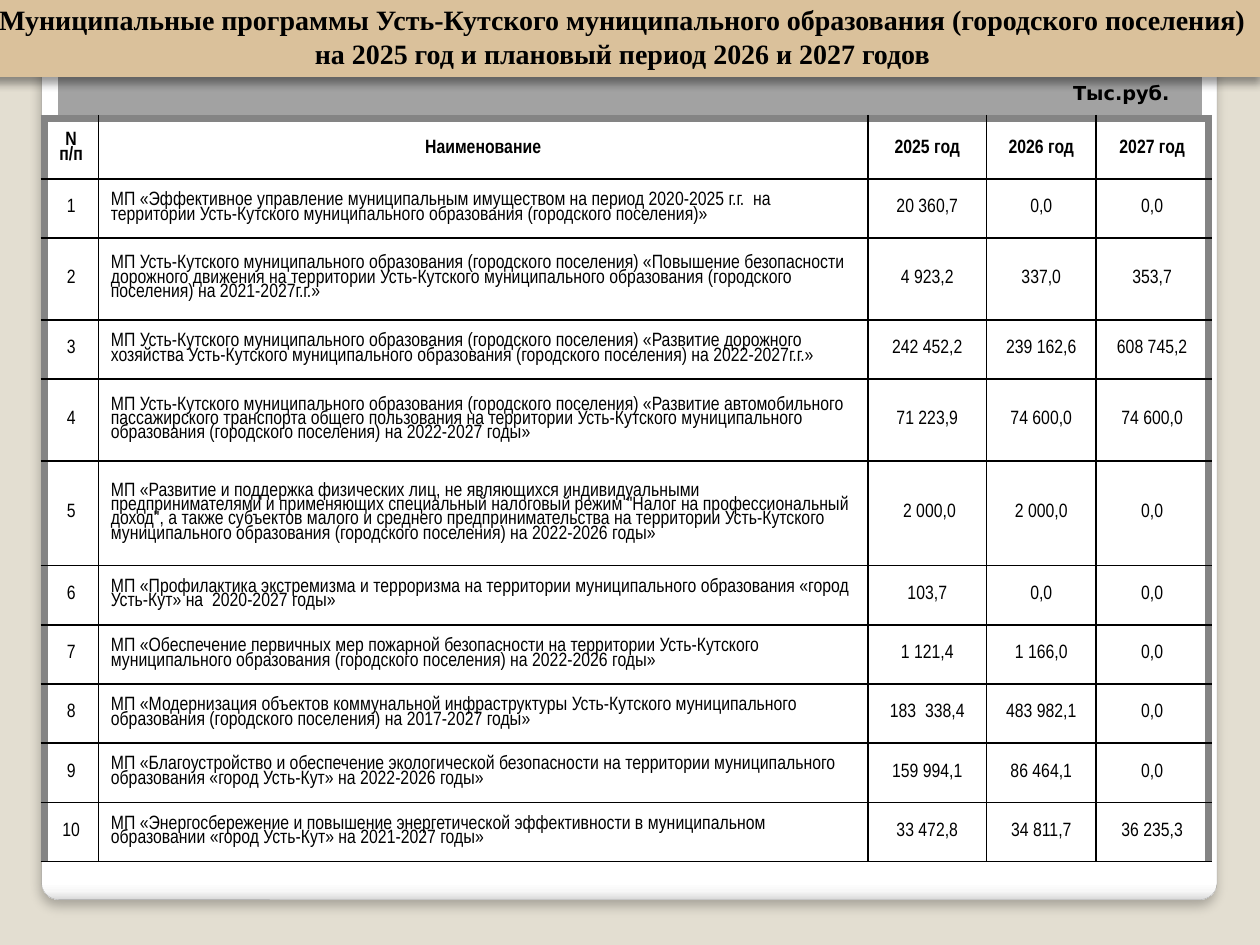
"""Build a slide with a table of municipal programmes and their yearly budgets."""
from lxml import etree
from pptx import Presentation, util as u
from pptx.dml.color import RGBColor
from pptx.enum import shapes, text
from pptx.oxml import ns

TITLE = ("Муниципальные программы Усть-Кутского муниципального образования (городского поселения) "
         "на 2025 год и плановый период 2026 и 2027 годов")
UNIT = "Тыс.руб."
HEADER = ("N п/п", "Наименование", "2025 год", "2026 год", "2027 год")
PROGRAMMES = [
    ("МП «Эффективное управление муниципальным имуществом на период 2020-2025 г.г.  на территории "
     "Усть-Кутского муниципального образования (городского поселения)»", "20 360,7", "0,0", "0,0"),
    ("МП Усть-Кутского муниципального образования (городского поселения) «Повышение безопасности "
     "дорожного движения на территории Усть-Кутского муниципального образования (городского "
     "поселения) на 2021-2027г.г.»", "4 923,2", "337,0", "353,7"),
    ("МП Усть-Кутского муниципального образования (городского поселения) «Развитие дорожного "
     "хозяйства Усть-Кутского муниципального образования (городского поселения) на 2022-2027г.г.»",
     "242 452,2", "239 162,6", "608 745,2"),
    ("МП Усть-Кутского муниципального образования (городского поселения) «Развитие автомобильного "
     "пассажирского транспорта общего пользования на территории Усть-Кутского муниципального "
     "образования (городского поселения) на 2022-2027 годы»", "71 223,9", "74 600,0", "74 600,0"),
    ("МП «Развитие и поддержка физических лиц, не являющихся индивидуальными предпринимателями и "
     "применяющих специальный налоговый режим \"Налог на профессиональный доход\", а также субъектов "
     "малого и среднего предпринимательства на территории Усть-Кутского муниципального образования "
     "(городского поселения) на 2022-2026 годы»", " 2 000,0", "2 000,0", "0,0"),
    ("МП «Профилактика экстремизма и терроризма на территории муниципального образования "
     "«город Усть-Кут» на  2020-2027 годы»", "103,7", "0,0", "0,0"),
    ("МП «Обеспечение первичных мер пожарной безопасности на территории Усть-Кутского муниципального "
     "образования (городского поселения) на 2022-2026 годы»", "1 121,4", "1 166,0", "0,0"),
    ("МП «Модернизация объектов коммунальной инфраструктуры Усть-Кутского муниципального "
     "образования (городского поселения) на 2017-2027 годы»", "183  338,4", "483 982,1", "0,0"),
    ("МП «Благоустройство и обеспечение экологической безопасности на территории муниципального "
     "образования «город Усть-Кут» на 2022-2026 годы»", "159 994,1", "86 464,1", "0,0"),
    ("МП «Энергосбережение и повышение энергетической эффективности в муниципальном образовании "
     "«город Усть-Кут» на 2021-2027 годы»", "33 472,8", "34 811,7", "36 235,3"),
]
COLUMN_WIDTHS = (0.43, 6.11, 0.94, 0.87, 0.89)
HEADER_HEIGHT, ROW_HEIGHT = 0.48, 0.47
TALL_ROWS = {2: 0.65, 4: 0.65, 5: 0.83}

BLACK = RGBColor(0x00, 0x00, 0x00)
WHITE = RGBColor(0xFF, 0xFF, 0xFF)
BEIGE = RGBColor(0xE3, 0xDE, 0xD1)
TAN = RGBColor(0xDA, 0xC1, 0x9B)
LIGHT = RGBColor(0xF7, 0xF7, 0xF7)
PALE = RGBColor(0xE1, 0xE1, 0xE1)
SILVER = RGBColor(0xDA, 0xDA, 0xDA)
GREY = RGBColor(0xA2, 0xA2, 0xA2)
EDGE = RGBColor(0xA4, 0xA4, 0xA4)
FRAME = RGBColor(0x84, 0x84, 0x84)

DOWNWARD = '<a:lin ang="5400000" scaled="0"/>'
RADIAL = '<a:path path="circle"><a:fillToRect l="50000" t="175000" r="50000" b="-75000"/></a:path>'


def element(tag, attributes, inner):
    return etree.fromstring(f'<a:{tag} {ns.nsdecls("a")} {attributes}>{inner}</a:{tag}>')


def add_box(page, kind, place, shadow=None):
    box = page.shapes.add_shape(kind, *map(u.Inches, place))
    box.line.fill.background()
    box.shadow.inherit = False
    if shadow:
        alpha, blur, distance = shadow
        box.element.spPr.find(ns.qn("a:effectLst")).append(element(
            "outerShdw", f'blurRad="{u.Pt(blur)}" dist="{u.Pt(distance)}" dir="5400000" rotWithShape="0"',
            f'<a:srgbClr val="{BLACK}"><a:alpha val="{alpha * 1000}"/></a:srgbClr>'))
    return box


def add_panel(page, place, stops, direction, shadow=None):
    panel = add_box(page, shapes.MSO_SHAPE.ROUNDED_RECTANGLE, place, shadow)
    panel.adjustments[0] = 0.02
    marks = "".join(f'<a:gs pos="{share * 1000}"><a:srgbClr val="{colour}"/></a:gs>'
                    for share, colour in stops)
    fill = element("gradFill", 'rotWithShape="1"', f"<a:gsLst>{marks}</a:gsLst>{direction}")
    panel.element.spPr.find(ns.qn("a:prstGeom")).addnext(fill)
    return panel


def write(frame, words, size, face, bold, align=text.PP_ALIGN.CENTER):
    para = frame.paragraphs[0]
    para.text = words
    para.alignment = align
    para.font.size, para.font.name, para.font.bold = u.Pt(size), face, bold
    para.font.color.rgb = BLACK
    return para


def set_borders(cell, framed):
    for side in "LRTB":
        colour, width = (FRAME, 4.5) if side in framed else (BLACK, 1)
        cell._tc.get_or_add_tcPr().append(element(
            f"ln{side}", f'w="{u.Pt(width)}"',
            f'<a:solidFill><a:srgbClr val="{colour}"/></a:solidFill>'))


def add_budget_table(page):
    rows = [HEADER] + [(str(number), *programme) for number, programme in enumerate(PROGRAMMES, 1)]
    heights = [HEADER_HEIGHT] + [TALL_ROWS.get(number, ROW_HEIGHT) for number in range(1, len(rows))]
    place = (0.35, 0.94, sum(COLUMN_WIDTHS), sum(heights))
    table = page.shapes.add_table(len(rows), len(HEADER), *map(u.Inches, place)).table
    table.first_row = table.horz_banding = False
    for column, width in zip(table.columns, COLUMN_WIDTHS):
        column.width = u.Inches(width)
    for r, (row, height) in enumerate(zip(rows, heights)):
        table.rows[r].height = u.Inches(height)
        for c, words in enumerate(row):
            cell = table.cell(r, c)
            framed = ("T" if r == 0 else "") + {0: "L", len(row) - 1: "R"}.get(c, "")
            set_borders(cell, framed)
            cell.fill.solid()
            cell.fill.fore_color.rgb = WHITE
            cell.vertical_anchor = text.MSO_ANCHOR.MIDDLE
            align = text.PP_ALIGN.LEFT if r and c == 1 else text.PP_ALIGN.CENTER
            para = write(cell.text_frame, words, 11, "Arial Narrow", r == 0, align)
            para.line_spacing = 0.8


def main():
    deck = Presentation()
    deck.slide_width, deck.slide_height = u.Inches(10), u.Inches(7.5)
    page = deck.slides.add_slide(deck.slide_layouts[6])
    page.background.fill.solid()
    page.background.fill.fore_color.rgb = BEIGE

    sheet = add_panel(page, (0.33, 0.36, 9.33, 6.78),
                      [(0, WHITE), (98, WHITE), (99, LIGHT), (100, SILVER)], DOWNWARD, (25, 6, 4))
    sheet.line.color.rgb = EDGE
    sheet.line.width = u.Pt(0.16)
    add_panel(page, (0.46, 0.47, 9.08, 6), [(0, WHITE), (55, PALE), (100, GREY)], RADIAL)

    banner = add_box(page, shapes.MSO_SHAPE.RECTANGLE, (-0.12, -0.03, 10.12, 0.64), (40, 5.2, 3))
    banner.fill.solid()
    banner.fill.fore_color.rgb = TAN
    write(banner.text_frame, TITLE, 16, "Times New Roman", True)

    add_budget_table(page)
    unit = page.shapes.add_textbox(*map(u.Inches, (8.31, 0.57, 1.18, 0.34)))
    unit.text_frame.word_wrap = True
    unit.text_frame.vertical_anchor = text.MSO_ANCHOR.MIDDLE
    write(unit.text_frame, UNIT, 11, "DejaVu Sans", True)
    deck.save("out.pptx")


if __name__ == "__main__":
    main()
